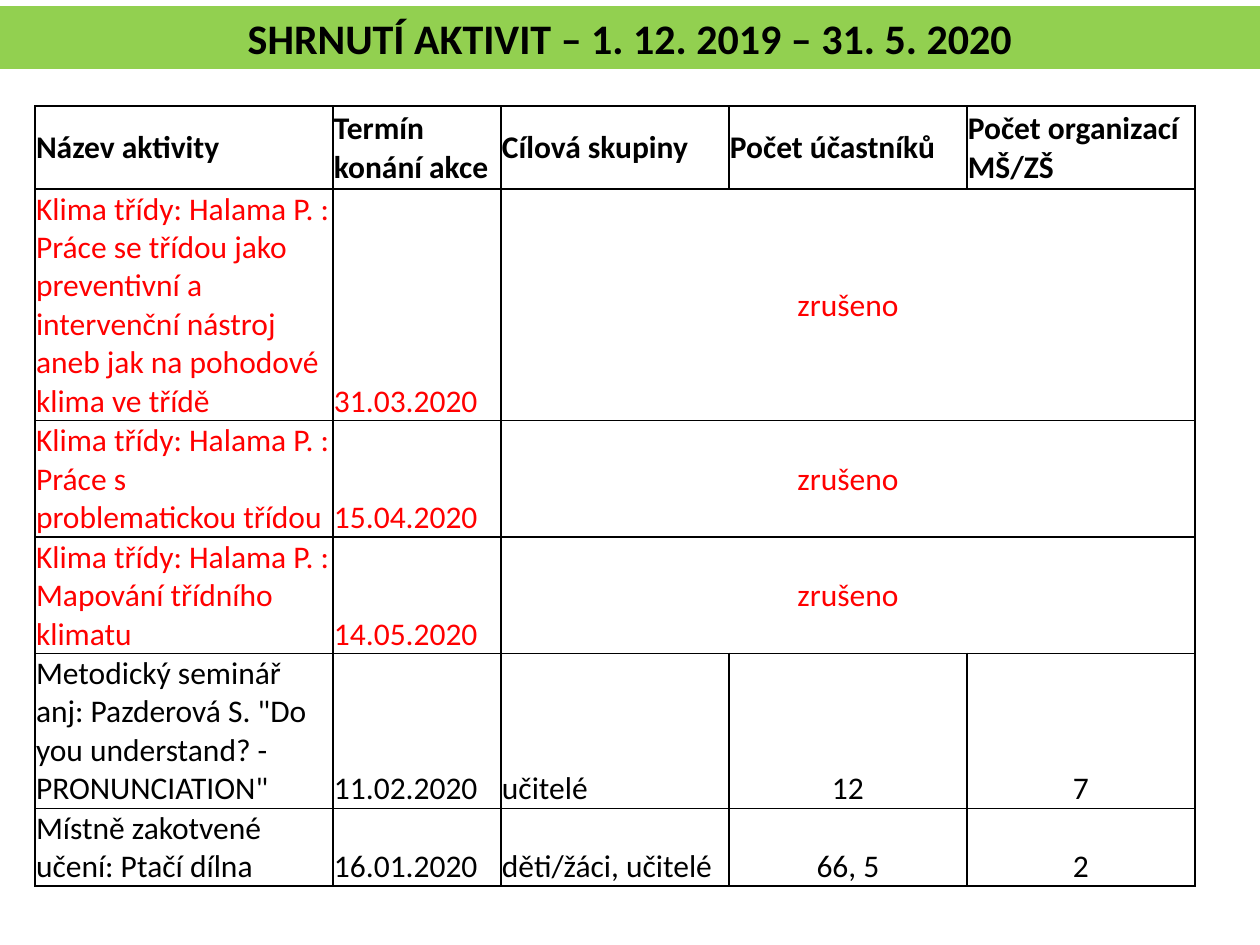
from lxml.etree import SubElement
from pptx import Presentation
from pptx.dml.color import RGBColor
from pptx.enum.text import MSO_ANCHOR, MSO_AUTO_SIZE, PP_ALIGN
from pptx.oxml.ns import qn
from pptx.util import Emu, Pt

COLORS = {"band": "92D050", "text": "000000", "off": "FF0000", "line": "000000"}
WIDTHS = [298, 168, 228, 238, 228]
HEIGHTS = [83, 227, 115, 114, 153, 76]
ROWS = [
    ["Název aktivity", "Termín konání akce", "Cílová skupiny",
     "Počet účastníků", "Počet organizací MŠ/ZŠ"],
    ["Klima třídy: Halama P. : Práce se třídou jako preventivní a "
     "intervenční nástroj aneb jak na pohodové klima ve třídě",
     "31.03.2020", "zrušeno"],
    ["Klima třídy: Halama P. : Práce s problematickou třídou",
     "15.04.2020", "zrušeno"],
    ["Klima třídy: Halama P. : Mapování třídního klimatu",
     "14.05.2020", "zrušeno"],
    ['Metodický seminář anj: Pazderová S. "Do you understand? - PRONUNCIATION"',
     "11.02.2020", "učitelé", "12", "7"],
    ["Místně zakotvené učení: Ptačí dílna",
     "16.01.2020", "děti/žáci, učitelé", "66, 5", "2"],
]


def px(n):
    return Emu(round(n * 914400 / 126))


def write(frame, text, size, color, bold, align):
    para = frame.paragraphs[0]
    para.alignment = align
    run = para.add_run()
    run.text = text
    font = run.font
    font.name, font.size, font.bold = "Calibri", Pt(size), bold
    font.color.rgb = RGBColor.from_string(COLORS[color])


deck = Presentation()
deck.slide_width, deck.slide_height = px(1260), px(945)
slide = deck.slides.add_slide(deck.slide_layouts[5])

# Title band
title = slide.shapes.title
title.left, title.top, title.width, title.height = px(0), px(6), px(1260), px(63)
title.fill.solid()
title.fill.fore_color.rgb = RGBColor.from_string(COLORS["band"])
frame = title.text_frame
frame.word_wrap = True
frame.auto_size = MSO_AUTO_SIZE.NONE
frame.vertical_anchor = MSO_ANCHOR.MIDDLE
write(frame, "SHRNUTÍ AKTIVIT – 1. 12. 2019 – 31. 5. 2020", 24, "text", True,
      PP_ALIGN.CENTER)

# Table of activities
table = slide.shapes.add_table(len(ROWS), len(WIDTHS), px(35), px(106),
                               px(sum(WIDTHS)), px(sum(HEIGHTS))).table
table.horz_banding = False
for col, width in zip(table.columns, WIDTHS):
    col.width = px(width)
for row, height in zip(table.rows, HEIGHTS):
    row.height = px(height)

for cell in table.iter_cells():
    cell.margin_left = cell.margin_right = cell.margin_top = px(1)
    cell.margin_bottom = 0
    props = cell._tc.get_or_add_tcPr()
    for side in ("a:lnL", "a:lnR", "a:lnT", "a:lnB"):
        line = SubElement(props, qn(side), w=str(Pt(1)))
        fill = SubElement(line, qn("a:solidFill"))
        SubElement(fill, qn("a:srgbClr"), val=COLORS["line"])
    cell.fill.background()

for r, texts in enumerate(ROWS):
    head = r == 0
    off = texts[-1] == "zrušeno"
    if off:
        table.cell(r, 2).merge(table.cell(r, 4))
    for c, text in enumerate(texts):
        cell = table.cell(r, c)
        merged = off and c == 2
        mid = head or merged
        center = merged or (c > 2 and not head)
        cell.vertical_anchor = MSO_ANCHOR.MIDDLE if mid else MSO_ANCHOR.BOTTOM
        write(cell.text_frame, text, 18, "off" if off else "text", head,
              PP_ALIGN.CENTER if center else PP_ALIGN.LEFT)

deck.save("out.pptx")
